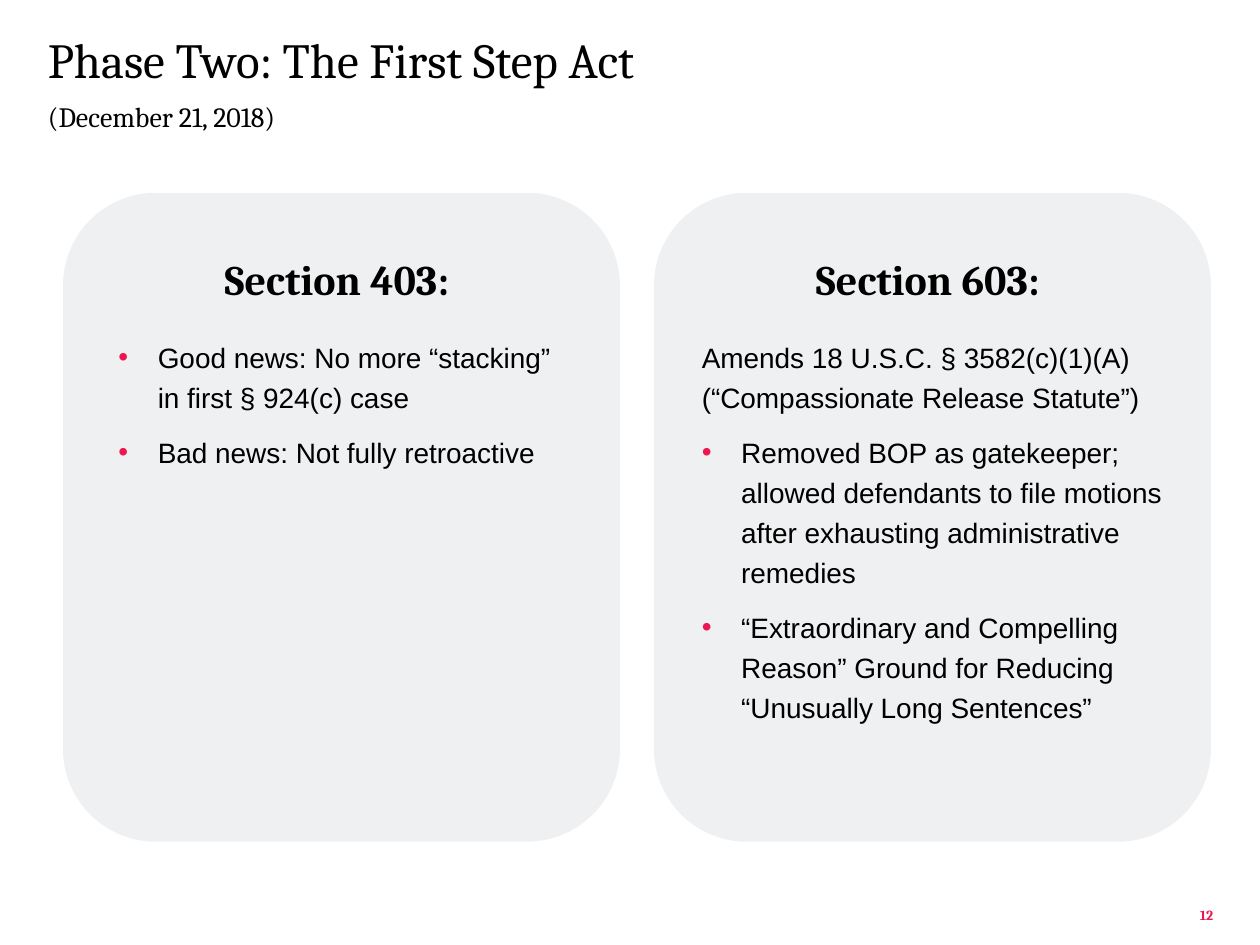
from lxml.etree import SubElement
from pptx import Presentation
from pptx.dml.color import RGBColor
from pptx.enum.shapes import MSO_SHAPE as Shape
from pptx.enum.text import MSO_ANCHOR as Anchor, PP_ALIGN as Align
from pptx.oxml.ns import qn
from pptx.util import Pt

COLORS = {"text": "000000", "accent": "ED174F", "card": "EFF0F1"}
SERIF, SANS = "Cambria", "Arial"
CARD_TOP, CARD_WIDTH, CARD_HEIGHT = 110.16, 318.24, 370.8
INDENT = 22.5
CARDS = [
    (36, "Section 403: ", 31.68, 257.04, [
        ("Good news: No more “stacking” in first § 924(c) case", True),
        ("Bad news: Not fully retroactive", True),
    ]),
    (373.68, "Section 603: ", 27.36, 264.24, [
        ("Amends 18 U.S.C. § 3582(c)(1)(A) (“Compassionate Release Statute”)", False),
        ("Removed BOP as gatekeeper; allowed defendants to file motions "
         "after exhausting administrative remedies", True),
        ("“Extraordinary and Compelling Reason” Ground for Reducing "
         "“Unusually Long Sentences”", True),
    ]),
]


def rgb(name):
    """Return the named colour."""
    return RGBColor.from_string(COLORS[name])


def add_bullet(para):
    """Give a paragraph a hanging accent-coloured bullet."""
    props = para._p.get_or_add_pPr()
    props.set("marL", str(Pt(INDENT)))
    props.set("indent", str(-Pt(INDENT)))
    color = SubElement(props, qn("a:buClr"))
    SubElement(color, qn("a:srgbClr"), val=COLORS["accent"])
    SubElement(props, qn("a:buFont"), typeface=SANS)
    SubElement(props, qn("a:buChar"), char="•")


def add_text(page, box, items, size, face=SERIF, color="text", bold=False,
             align=Align.LEFT, spacing=1.0, after=0, anchor=Anchor.TOP):
    """Place paragraphs of (text, bulleted) pairs in a box without insets."""
    frame = page.shapes.add_textbox(*map(Pt, box)).text_frame
    frame.word_wrap = True
    frame.vertical_anchor = anchor
    frame.margin_left = frame.margin_right = 0
    frame.margin_top = frame.margin_bottom = 0
    for index, (text, bulleted) in enumerate(items):
        para = frame.add_paragraph() if index else frame.paragraphs[0]
        para.text = text
        para.alignment = align
        para.line_spacing = spacing
        para.space_after = Pt(after)
        if bulleted:
            add_bullet(para)
        font = para.font
        font.name, font.size, font.bold = face, Pt(size), bold
        font.color.rgb = rgb(color)


def add_header(page, left, top, width):
    """Place the title and the date below it."""
    add_text(page, (left, top, width, 30.24),
             [("Phase Two: The First Step Act", False)], 28, spacing=0.9)
    add_text(page, (left, top + 32.4, width, 20.88),
             [("(December 21, 2018)", False)], 16, spacing=1.2, after=8)


def add_card(page, left, top, heading, inset, width, items):
    """Place a rounded card with its heading and body text."""
    card = page.shapes.add_shape(Shape.ROUNDED_RECTANGLE, Pt(left), Pt(top),
                                 Pt(CARD_WIDTH), Pt(CARD_HEIGHT))
    card.shadow.inherit = False
    card.fill.solid()
    card.fill.fore_color.rgb = rgb("card")
    card.line.fill.background()
    add_text(page, (left - 20.88, top + 34.56, 360, 28.8), [(heading, False)],
             24, bold=True, align=Align.CENTER)
    add_text(page, (left + inset, top + 80.64, width, 349.2), items,
             16, face=SANS, spacing=1.2, after=8)


def add_page_number(page, left, top):
    """Place the page number in the lower right corner."""
    add_text(page, (left, top, 20.16, 15.12), [("12", False)], 8,
             color="accent", bold=True, align=Align.RIGHT, spacing=0.9,
             anchor=Anchor.BOTTOM)


def main():
    """Build the slide and save the deck."""
    deck = Presentation()
    deck.slide_width, deck.slide_height = Pt(720), Pt(540)
    page = deck.slides.add_slide(deck.slide_layouts[6])
    add_header(page, 27.36, 20.88, 666)
    for left, heading, inset, width, items in CARDS:
        add_card(page, left, CARD_TOP, heading, inset, width, items)
    add_page_number(page, 673.2, 512.64)
    deck.save("out.pptx")


if __name__ == "__main__":
    main()
